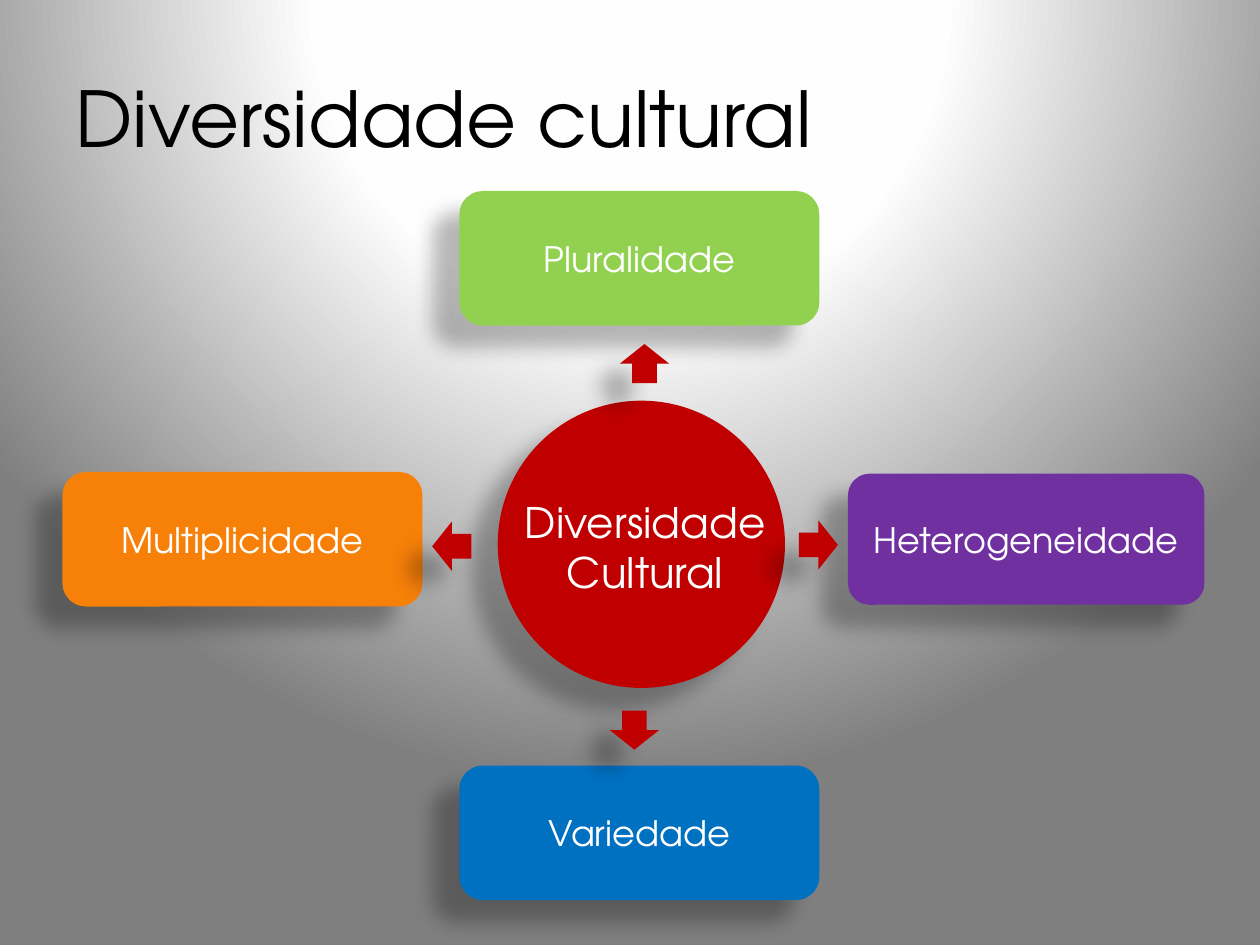
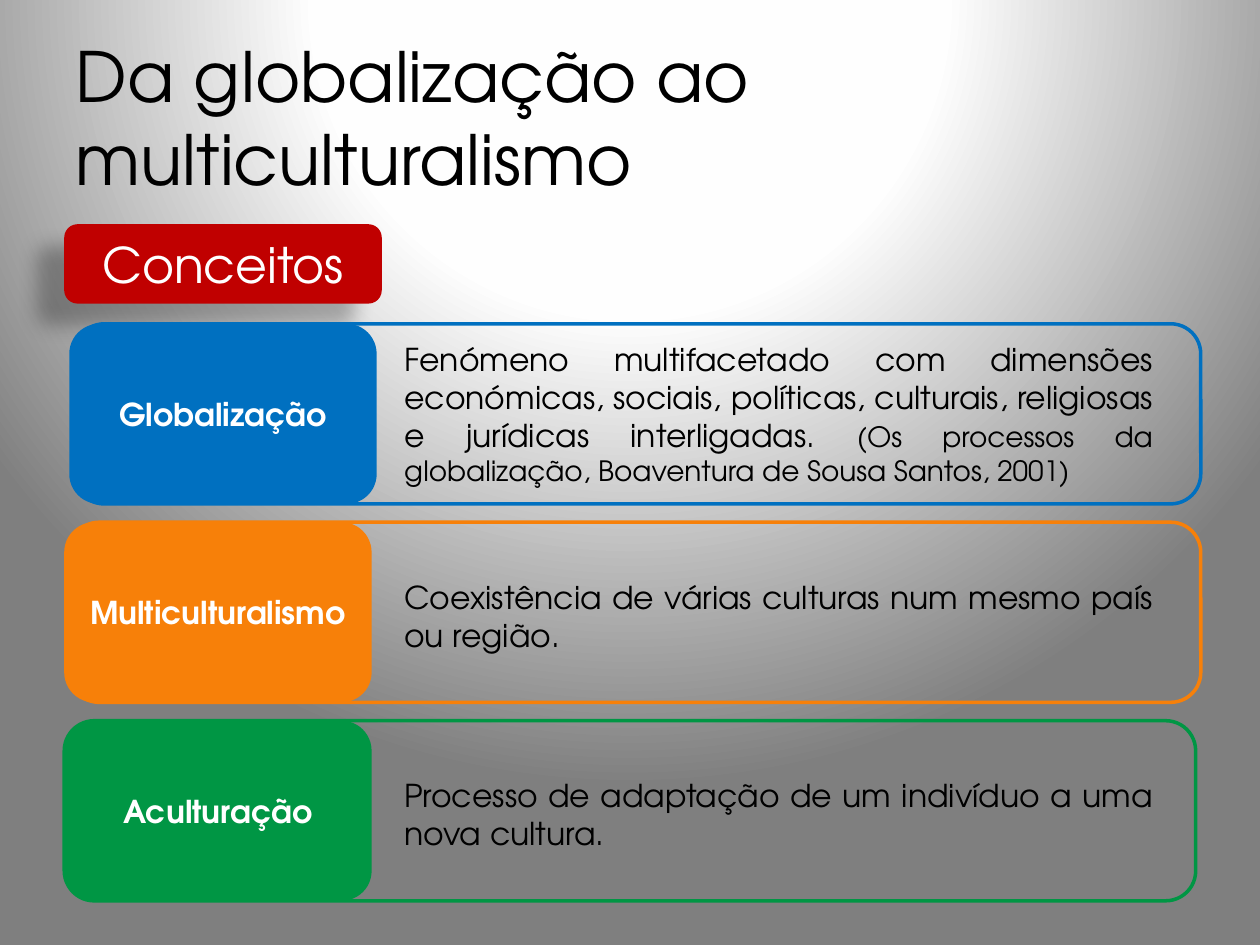
import pptx
import pptx.util
import pptx.dml.color
import pptx.enum.shapes
import pptx.enum.text
import pptx.oxml
from lxml import etree

COLUMNS, ROWS = 100, 75
FONT = "TeX Gyre Adventor"
RED, ORANGE, BLUE = "C00000", "F78009", "0070C0"
GREEN, LIME, PURPLE = "009644", "92D050", "7030A0"
WHITE, BLACK = "FFFFFF", "000000"
BACKGROUND = [(0, WHITE), (40, "FEFEFE"), (100, "7F7F7F")]
TITLE_LEFT, TITLE_TOP, TITLE_HEIGHT = 5, 3, 12.5

DIVERSITY = "Diversidade cultural"
HUB = ["Diversidade", "Cultural"]
HUB_CENTRE, HUB_SIZE = (50.9, 43.2), 22.8
HUB_LABEL = (39.8, 38.9, 22.8, 9.1)
IDEA_SIZE = (28.3, 10.4)
IDEAS = [
    ("Heterogeneidade", PURPLE, None, (81.45, 42.8)),
    ("Multiplicidade", ORANGE, ORANGE, (19.25, 42.8)),
    ("Pluralidade", LIME, LIME, (50.75, 20.5)),
    ("Variedade", BLUE, BLUE, (50.75, 66.1)),
]
ARROW_SIZE = (3.1, 3.9)
ARROWS = [
    (0, (64.95, 43.25)),
    (180, (35.85, 43.35)),
    (90, (50.35, 57.95)),
    (270, (51.15, 28.85)),
]

GLOBALIZATION = "Da globalização ao multiculturalismo"
SECTION = "Conceitos"
SECTION_BOX = (5.1, 17.8, 25.2, 6.3)
CONCEPT_TOP, CONCEPT_PITCH = 25.7, 15.75
CONCEPT_HEIGHT, TERM_WIDTH = 14.3, 24.4
MEANING_LEFT, MEANING_WIDTH = 31.1, 61.4
CONCEPTS = [
    {"term": "Globalização", "colour": BLUE, "term_left": 5.5, "frame": (5.9, 95.3),
     "meaning_rows": (26.5, 12.8),
     "meaning": [
         ("Fenómeno multifacetado com dimensões económicas, sociais, políticas, "
          "culturais, religiosas e jurídicas interligadas. ", 18),
         ("(Os processos da globalização, Boaventura de Sousa Santos, 2001)", 16)]},
    {"term": "Multiculturalismo", "colour": ORANGE, "term_left": 5.1, "frame": (5.5, 95.3),
     "meaning_rows": (45.4, 7.1),
     "meaning": [("Coexistência de várias culturas num mesmo país ou região.", 18)]},
    {"term": "Aculturação", "colour": GREEN, "term_left": 5.1, "frame": (5.1, 94.9),
     "meaning_rows": (61.1, 7.1),
     "meaning": [("Processo de adaptação de um indivíduo a uma nova cultura.", 18)]},
]

SHAPE = pptx.enum.shapes.MSO_SHAPE
ALIGN = pptx.enum.text.PP_ALIGN
ANCHOR = pptx.enum.text.MSO_ANCHOR
NAMESPACE = 'xmlns:a="http://schemas.openxmlformats.org/drawingml/2006/main"'

deck = pptx.Presentation()
deck.slide_width = pptx.util.Inches(10)
deck.slide_height = pptx.util.Inches(7.5)


def rgb(colour):
    return pptx.dml.color.RGBColor.from_string(colour)


def grid(left, top, width, height):
    column, row = deck.slide_width / COLUMNS, deck.slide_height / ROWS
    return [round(n * unit) for n, unit in
            ((left, column), (top, row), (width, column), (height, row))]


def around(centre, size):
    return (centre[0] - size[0] / 2, centre[1] - size[1] / 2, *size)


def write(holder, paragraphs, size=18, colour=BLACK, bold=False,
          align=ALIGN.LEFT, anchor=ANCHOR.MIDDLE):
    frame = holder.text_frame
    frame.word_wrap = True
    frame.auto_size = pptx.enum.text.MSO_AUTO_SIZE.NONE
    frame.vertical_anchor = anchor
    for index, runs in enumerate(paragraphs):
        paragraph = frame.paragraphs[0] if index == 0 else frame.add_paragraph()
        paragraph.alignment = align
        for words, run_size in ([(runs, size)] if isinstance(runs, str) else runs):
            run = paragraph.add_run()
            run.text = words
            run.font.name = FONT
            run.font.size = pptx.util.Pt(run_size)
            run.font.bold = bold
            run.font.color.rgb = rgb(colour)


def cast_shadow(shape):
    effects = shape.element.spPr.find("{*}effectLst")
    effects.append(pptx.oxml.parse_xml(
        f'<a:outerShdw {NAMESPACE} blurRad="{pptx.util.Pt(11.8)}" '
        f'dist="{pptx.util.Pt(19.7)}" dir="{141 * 60000}" algn="ctr" rotWithShape="0">'
        f'<a:srgbClr val="{BLACK}"><a:alpha val="28000"/></a:srgbClr></a:outerShdw>'))


def draw(shapes, kind, box, fill=None, line=None, shadow=False):
    shape = shapes.add_shape(kind, *grid(*box))
    shape.shadow.inherit = False
    if fill:
        shape.fill.solid()
        shape.fill.fore_color.rgb = rgb(fill)
    else:
        shape.fill.background()
    if line:
        shape.line.color.rgb = rgb(line)
        shape.line.width = pptx.util.Pt(2)
    else:
        shape.line.fill.background()
    if shadow:
        cast_shadow(shape)
    return shape


def paint_background(master):
    master.background.fill.solid()
    properties = master.element.find(".//{*}bgPr")
    stops = "".join(f'<a:gs pos="{share * 1000}"><a:srgbClr val="{colour}"/></a:gs>'
                    for share, colour in BACKGROUND)
    gradient = etree.tostring(pptx.oxml.parse_xml(
        f'<a:gradFill {NAMESPACE} rotWithShape="1"><a:gsLst>{stops}</a:gsLst>'
        '<a:path path="circle"><a:fillToRect l="50000" t="-80000" r="50000" b="180000"/>'
        '</a:path></a:gradFill>'))
    properties.replace(properties[0], pptx.oxml.parse_xml(gradient))


def add_slide(title, width, size):
    slide = deck.slides.add_slide(deck.slide_layouts[5])
    heading = slide.shapes.title
    heading.left, heading.top, heading.width, heading.height = grid(
        TITLE_LEFT, TITLE_TOP, width, TITLE_HEIGHT)
    write(heading, [title], size=size)
    return slide.shapes


def build_diversity():
    shapes = add_slide(DIVERSITY, 90, 44)
    hub = shapes.add_group_shape().shapes
    draw(hub, SHAPE.OVAL, around(HUB_CENTRE, (HUB_SIZE, HUB_SIZE)), RED, shadow=True)
    write(hub.add_textbox(*grid(*HUB_LABEL)), HUB, size=24, colour=WHITE,
          align=ALIGN.CENTER, anchor=ANCHOR.TOP)
    for idea, fill, line, centre in IDEAS:
        box = draw(shapes, SHAPE.ROUNDED_RECTANGLE, around(centre, IDEA_SIZE),
                   fill, line, shadow=True)
        write(box, [idea], size=20, colour=WHITE, align=ALIGN.CENTER)
    for turn, centre in ARROWS:
        arrow = draw(shapes, SHAPE.RIGHT_ARROW, around(centre, ARROW_SIZE), RED, shadow=True)
        arrow.rotation = turn


def build_concepts():
    shapes = add_slide(GLOBALIZATION, 79.6, 39.6)
    section = draw(shapes, SHAPE.ROUNDED_RECTANGLE, SECTION_BOX, RED, shadow=True)
    write(section, [SECTION], size=28, colour=WHITE, align=ALIGN.CENTER)
    for index, concept in enumerate(CONCEPTS):
        top = CONCEPT_TOP + index * CONCEPT_PITCH
        left, right = concept["frame"]
        draw(shapes, SHAPE.ROUNDED_RECTANGLE, (left, top, right - left, CONCEPT_HEIGHT),
             line=concept["colour"])
        term = draw(shapes, SHAPE.ROUNDED_RECTANGLE,
                    (concept["term_left"], top, TERM_WIDTH, CONCEPT_HEIGHT),
                    concept["colour"])
        write(term, [concept["term"]], colour=WHITE, bold=True, align=ALIGN.CENTER)
        meaning_top, meaning_height = concept["meaning_rows"]
        meaning = shapes.add_textbox(
            *grid(MEANING_LEFT, meaning_top, MEANING_WIDTH, meaning_height))
        write(meaning, [concept["meaning"]], align=ALIGN.JUSTIFY, anchor=ANCHOR.TOP)


def main():
    paint_background(deck.slide_master)
    build_diversity()
    build_concepts()
    deck.save("out.pptx")


if __name__ == "__main__":
    main()
